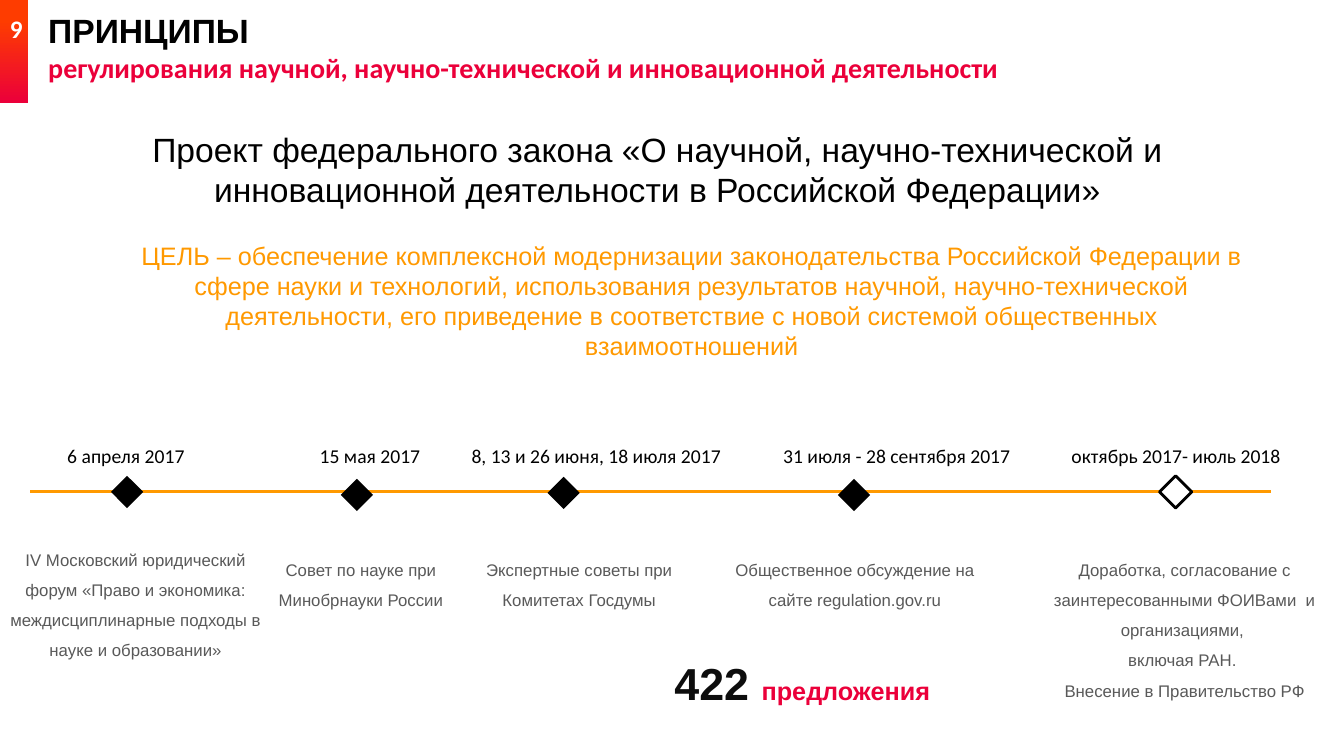
from lxml import etree
from pptx import Presentation
from pptx.dml.color import RGBColor
from pptx.enum import shapes, text
from pptx.oxml.ns import qn
from pptx.util import Inches, Pt

BLACK, WHITE, GREY = "000000", "FFFFFF", "595959"
RED, FLAME, ORANGE = "EB003A", "FE3C00", "FF9900"
CENTER = text.PP_ALIGN.CENTER

# Date, its left and width; diamond left and top; caption, its left, top, width and height
MILESTONES = [
    ("6 апреля 2017", 0.4, 1.7, 1.1, 4.72,
     "IV Московский юридический форум «Право и экономика: "
     "междисциплинарные подходы в науке и образовании»", 0, 5.3, 2.69, 1.31),
    ("15 мая 2017", 2.82, 1.7, 3.38, 4.75,
     "Совет по науке при Минобрнауки России", 2.64, 5.4, 1.88, 0.71),
    ("8, 13 и 26 июня, 18 июля 2017", 4.38, 3.07, 5.43, 4.73,
     "Экспертные советы при Комитетах Госдумы", 4.62, 5.4, 2.25, 0.71),
    ("31 июля - 28 сентября 2017", 7.36, 3.07, 8.31, 4.75,
     "Общественное обсуждение на сайте regulation.gov.ru", 7.14, 5.4, 2.68, 0.71),
    ("октябрь 2017- июль 2018", 10.13, 3.07, 11.5, 4.72,
     "Доработка, согласование с заинтересованными ФОИВами  и организациями, \n"
     "включая РАН. \nВнесение в Правительство РФ", 10.29, 5.4, 2.92, 1.62),
]


def rgb(value):
    return RGBColor.from_string(value)


def set_font(font, size, color, name="Arial", bold=False):
    font.size, font.name, font.bold = Pt(size), name, bold
    font.color.rgb = rgb(color)


def add_box(page, left, top, width, height):
    """Add an empty wrapping text box and return its text frame."""
    box = page.shapes.add_textbox(Inches(left), Inches(top), Inches(width), Inches(height))
    frame = box.text_frame
    frame.word_wrap = True
    frame.auto_size = text.MSO_AUTO_SIZE.SHAPE_TO_FIT_TEXT
    return frame


def write(para, words, size, color, name="Arial", bold=False, align=None, spacing=None):
    para.text = words
    para.alignment, para.line_spacing = align, spacing
    set_font(para.font, size, color, name, bold)


def add_text(page, place, words, size, color, **style):
    write(add_box(page, *place).paragraphs[0], words, size, color, **style)


def add_shape(page, kind, left, top, width, height):
    shape = page.shapes.add_shape(kind, Inches(left), Inches(top), Inches(width), Inches(height))
    shape.shadow.inherit = False
    shape.line.fill.background()
    return shape


def add_header(page):
    frame = add_box(page, 0.38, 0.05, 12.51, 0.84)
    write(frame.paragraphs[0], "ПРИНЦИПЫ", 24, BLACK, bold=True)
    write(frame.add_paragraph(),
          "регулирования научной, научно-технической и инновационной деятельности",
          20, RED, name="Calibri", bold=True)

    tab = add_shape(page, shapes.MSO_SHAPE.RECTANGLE, 0, 0, 0.28, 1.02)
    tab.fill.gradient()
    tab.fill.gradient_angle = 90
    for stop, color, position in zip(tab.fill.gradient_stops, (RED, FLAME), (0, 0.8)):
        stop.color.rgb = rgb(color)
        stop.position = position
    add_text(page, (0, 0.08, 0.67, 0.4), "9", 18, WHITE, name="Calibri", bold=True)


def add_axis(page, left, right, top):
    axis = page.shapes.add_connector(shapes.MSO_CONNECTOR.STRAIGHT, Inches(left), Inches(top),
                                     Inches(right), Inches(top))
    axis.line.color.rgb = rgb(ORANGE)
    axis.line.width = Pt(2.25)
    etree.SubElement(axis._element.spPr, qn("a:effectLst"))


def add_diamond(page, left, top, is_open):
    diamond = add_shape(page, shapes.MSO_SHAPE.DIAMOND, left, top, 0.32, 0.32)
    diamond.fill.solid()
    diamond.fill.fore_color.rgb = rgb(WHITE if is_open else BLACK)
    if is_open:
        diamond.line.color.rgb = rgb(BLACK)
        diamond.line.width = Pt(2)


def add_timeline(page):
    add_axis(page, 0.3, 12.61, 4.88)
    for milestone in MILESTONES:
        date, date_left, date_width, left, top, caption, *caption_place = milestone
        add_diamond(page, left, top, is_open=milestone is MILESTONES[-1])
        add_text(page, (date_left, 4.36, date_width, 0.34), date, 14, BLACK,
                 name="Calibri", align=CENTER)
        add_text(page, caption_place, caption, 12, GREY, align=CENTER, spacing=1.5)


def add_proposal_count(page):
    para = add_box(page, 6.59, 6.4, 3.54, 0.69).paragraphs[0]
    para.line_spacing = 1.1
    for words, size, color in (("422 ", 32, "0D0D0D"), ("предложения", 18, RED)):
        span = para.add_run()
        span.text = words
        set_font(span.font, size, color, bold=True)


def main():
    deck = Presentation()
    deck.slide_width, deck.slide_height = Inches(13.33), Inches(7.5)
    page = deck.slides.add_slide(deck.slide_layouts[6])
    add_header(page)
    add_text(page, (0.87, 1.23, 11.3, 0.91),
             "Проект федерального закона «О научной, научно-технической и "
             "инновационной деятельности в Российской Федерации»", 24, BLACK, align=CENTER)
    add_text(page, (1.23, 2.33, 11.26, 1.31),
             "ЦЕЛЬ – обеспечение комплексной модернизации законодательства Российской Федерации "
             "в сфере науки и технологий, использования результатов научной, "
             "научно-технической деятельности, его приведение в соответствие с новой системой "
             "общественных взаимоотношений", 18, ORANGE, align=CENTER)
    add_timeline(page)
    add_proposal_count(page)
    deck.save("out.pptx")


if __name__ == "__main__":
    main()
